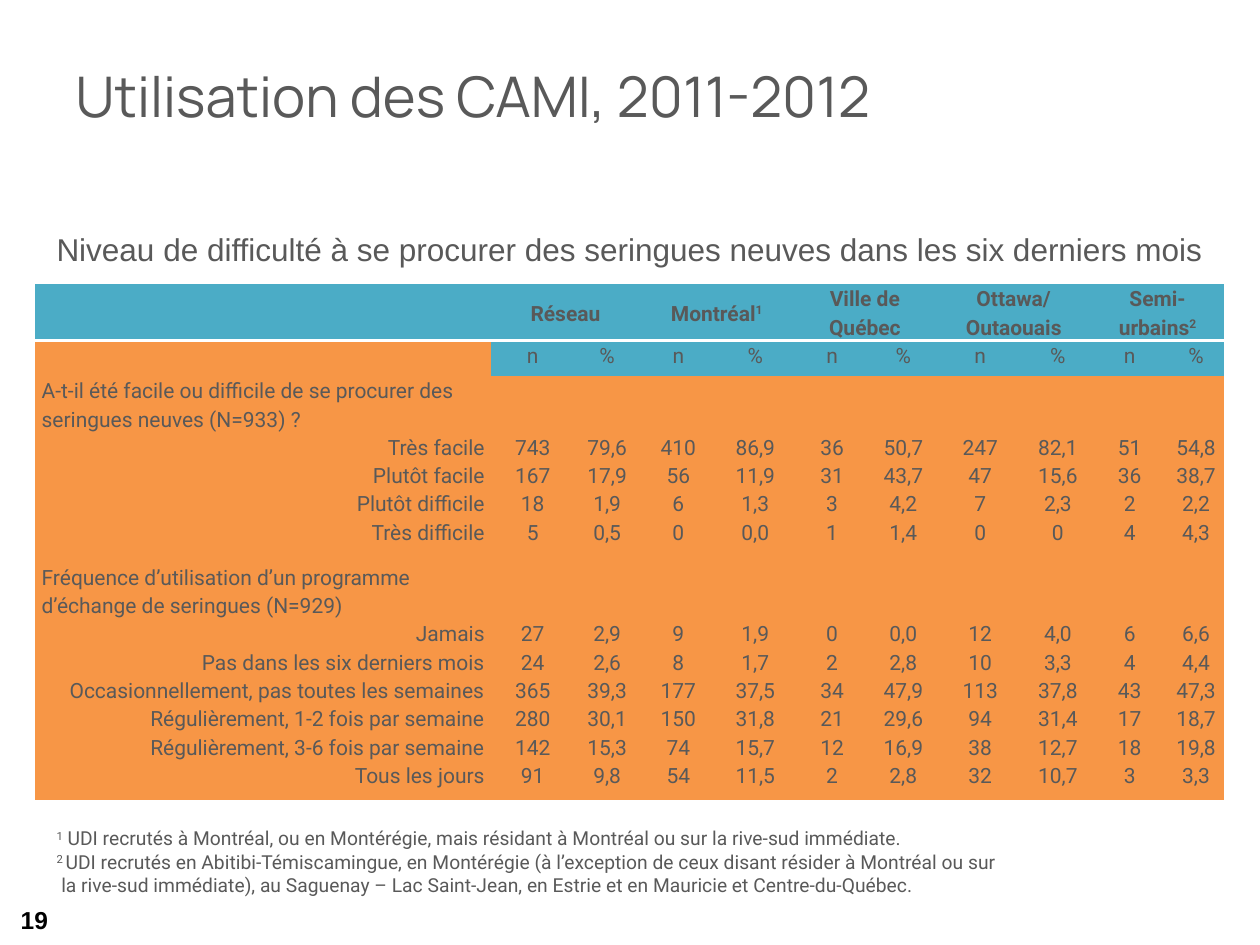
from lxml.etree import SubElement
from pptx import Presentation
from pptx.dml.color import RGBColor
from pptx.enum.text import MSO_ANCHOR, MSO_AUTO_SIZE, PP_ALIGN
from pptx.oxml.ns import qn
from pptx.util import Cm, Pt

COLORS = {
    "text": "595959",
    "number": "000000",
    "header": "4BACC6",
    "body": "F79646",
    "rule": "FFFFFF",
}
PLAIN_TABLE_STYLE = "{2D5ABB26-0587-4C30-8999-92F81FD0307C}"
COLUMN_WIDTHS = [9.19, 1.68, 1.32, 1.55, 1.55, 1.55, 1.32, 1.78, 1.35, 1.55, 1.12]
ROW_HEIGHTS = [0.71, 0.71, 0.38, 2.62, 0.36, 3.66]
REGIONS = ["Réseau", "Montréal^1", "Ville de Québec", "Ottawa/\nOutaouais", "Semi-urbains^2"]
CENTERED_REGIONS = 2
DIFFICULTY_QUESTION = "A-t-il été facile ou difficile de se procurer des seringues neuves (N=933) ?"
DIFFICULTY = [
    ("Très facile", "743 79,6 410 86,9 36 50,7 247 82,1 51 54,8"),
    ("Plutôt facile", "167 17,9 56 11,9 31 43,7 47 15,6 36 38,7"),
    ("Plutôt difficile", "18 1,9 6 1,3 3 4,2 7 2,3 2 2,2"),
    ("Très difficile", "5 0,5 0 0,0 1 1,4 0 0 4 4,3"),
]
FREQUENCY_QUESTION = "Fréquence d’utilisation d’un programme d’échange de seringues (N=929)"
FREQUENCY = [
    ("Jamais", "27 2,9 9 1,9 0 0,0 12 4,0 6 6,6"),
    ("Pas dans les six derniers mois", "24 2,6 8 1,7 2 2,8 10 3,3 4 4,4"),
    ("Occasionnellement, pas toutes les semaines", "365 39,3 177 37,5 34 47,9 113 37,8 43 47,3"),
    ("Régulièrement, 1-2 fois par semaine", "280 30,1 150 31,8 21 29,6 94 31,4 17 18,7"),
    ("Régulièrement, 3-6 fois par semaine", "142 15,3 74 15,7 12 16,9 38 12,7 18 19,8"),
    ("Tous les jours", "91 9,8 54 11,5 2 2,8 32 10,7 3 3,3"),
]
FOOTNOTES = (
    "^1^ UDI recrutés à Montréal, ou en Montérégie, mais résidant à Montréal ou sur la rive-sud immédiate.\n"
    "^2 ^UDI recrutés en Abitibi-Témiscamingue, en Montérégie (à l’exception de ceux disant résider à Montréal ou sur\n"
    " la rive-sud immédiate), au Saguenay – Lac Saint-Jean, en Estrie et en Mauricie et Centre-du-Québec."
)


def write(frame, text, font, size, color="text", bold=False, align=PP_ALIGN.LEFT, spacing=None):
    for index, line in enumerate(text.split("\n")):
        paragraph = frame.add_paragraph() if index else frame.paragraphs[0]
        paragraph.alignment = align
        if spacing:
            paragraph.line_spacing = spacing
        for position, piece in enumerate(line.split("^")):
            if not piece:
                continue
            run = paragraph.add_run()
            run.text = piece
            run.font.name = font
            run.font.size = Pt(size)
            run.font.bold = bold
            run.font.color.rgb = RGBColor.from_string(COLORS[color])
            if position % 2:
                run.font._element.set("baseline", "30000")


def add_text(slide, box, text, font, size, anchor=MSO_ANCHOR.TOP, wrap=True, grow=False, **style):
    frame = slide.shapes.add_textbox(*(Cm(length) for length in box)).text_frame
    frame.word_wrap = wrap
    frame.vertical_anchor = anchor
    frame.auto_size = MSO_AUTO_SIZE.SHAPE_TO_FIT_TEXT if grow else MSO_AUTO_SIZE.NONE
    write(frame, text, font, size, **style)


def fill_cell(cell, color):
    cell.fill.solid()
    cell.fill.fore_color.rgb = RGBColor.from_string(COLORS[color])
    cell.margin_left = cell.margin_right = Cm(0.13)
    cell.margin_top = cell.margin_bottom = 0


def size_empty_cell(cell):
    paragraph = cell.text_frame.paragraphs[0]
    paragraph.line_spacing = 1.15
    SubElement(paragraph._p, qn("a:endParaRPr"), sz="1200")


def underline_cell(cell):
    properties = cell._tc.get_or_add_tcPr()
    line = properties.makeelement(qn("a:lnB"), {"w": str(Pt(2))})
    SubElement(SubElement(line, qn("a:solidFill")), qn("a:srgbClr"), val=COLORS["rule"])
    properties.insert(0, line)


def write_cell(cell, text, align=PP_ALIGN.CENTER, bold=False):
    write(cell.text_frame, text, "Roboto", 12, bold=bold, align=align, spacing=1.15)


def write_answers(table, row, answers):
    write_cell(table.cell(row, 0), "\n".join(label for label, _ in answers), PP_ALIGN.RIGHT)
    columns = zip(*(values.split() for _, values in answers))
    for column, values in enumerate(columns, start=1):
        write_cell(table.cell(row, column), "\n".join(values))


def add_usage_table(slide):
    table_frame = slide.shapes.add_table(
        len(ROW_HEIGHTS), len(COLUMN_WIDTHS), Cm(0.71), Cm(5.72), Cm(24), Cm(10.36))
    table = table_frame.table
    table.first_row = table.horz_banding = False
    table._tbl.tblPr.find(qn("a:tableStyleId")).text = PLAIN_TABLE_STYLE
    for column, width in zip(table.columns, COLUMN_WIDTHS):
        column.width = Cm(width)
    for row, height in zip(table.rows, ROW_HEIGHTS):
        row.height = Cm(height)
    table_frame.height = Cm(10.36)

    for row in range(len(ROW_HEIGHTS)):
        for column in range(len(COLUMN_WIDTHS)):
            is_header = row == 0 or (row == 1 and column > 0)
            fill_cell(table.cell(row, column), "header" if is_header else "body")
    for column in range(len(COLUMN_WIDTHS)):
        underline_cell(table.cell(0, column))

    for index, region in enumerate(REGIONS):
        column = 1 + 2 * index
        heading = table.cell(0, column)
        heading.merge(table.cell(0, column + 1))
        if index < CENTERED_REGIONS:
            heading.vertical_anchor = MSO_ANCHOR.MIDDLE
        write_cell(heading, region, bold=True)
        write_cell(table.cell(1, column), "n")
        write_cell(table.cell(1, column + 1), "%")

    write_cell(table.cell(2, 0), DIFFICULTY_QUESTION, PP_ALIGN.LEFT)
    write_answers(table, 3, DIFFICULTY)
    write_cell(table.cell(4, 0), FREQUENCY_QUESTION, PP_ALIGN.LEFT)
    write_answers(table, 5, FREQUENCY)
    for cell in table.iter_cells():
        if not cell.text_frame.text:
            size_empty_cell(cell)


def main():
    presentation = Presentation()
    presentation.slide_width, presentation.slide_height = Cm(25.4), Cm(19.05)
    slide = presentation.slides.add_slide(presentation.slide_layouts[6])
    add_text(slide, (1.27, 0.33, 22.86, 3.18), "Utilisation des CAMI, 2011-2012",
             "Manrope", 32, anchor=MSO_ANCHOR.MIDDLE)
    add_text(slide, (0, 18.03, 1.22, 1.02), "19", "Arial", 14, anchor=MSO_ANCHOR.MIDDLE,
             color="number", bold=True, align=PP_ALIGN.RIGHT)
    add_usage_table(slide)
    add_text(slide, (0.89, 4.52, 23.83, 1.02),
             "Niveau de difficulté à se procurer des seringues neuves dans les six derniers mois",
             "Arial", 18, wrap=False, grow=True)
    add_text(slide, (0.89, 16.54, 19.81, 1.68), FOOTNOTES, "Roboto", 11, grow=True)
    presentation.save("out.pptx")


if __name__ == "__main__":
    main()
